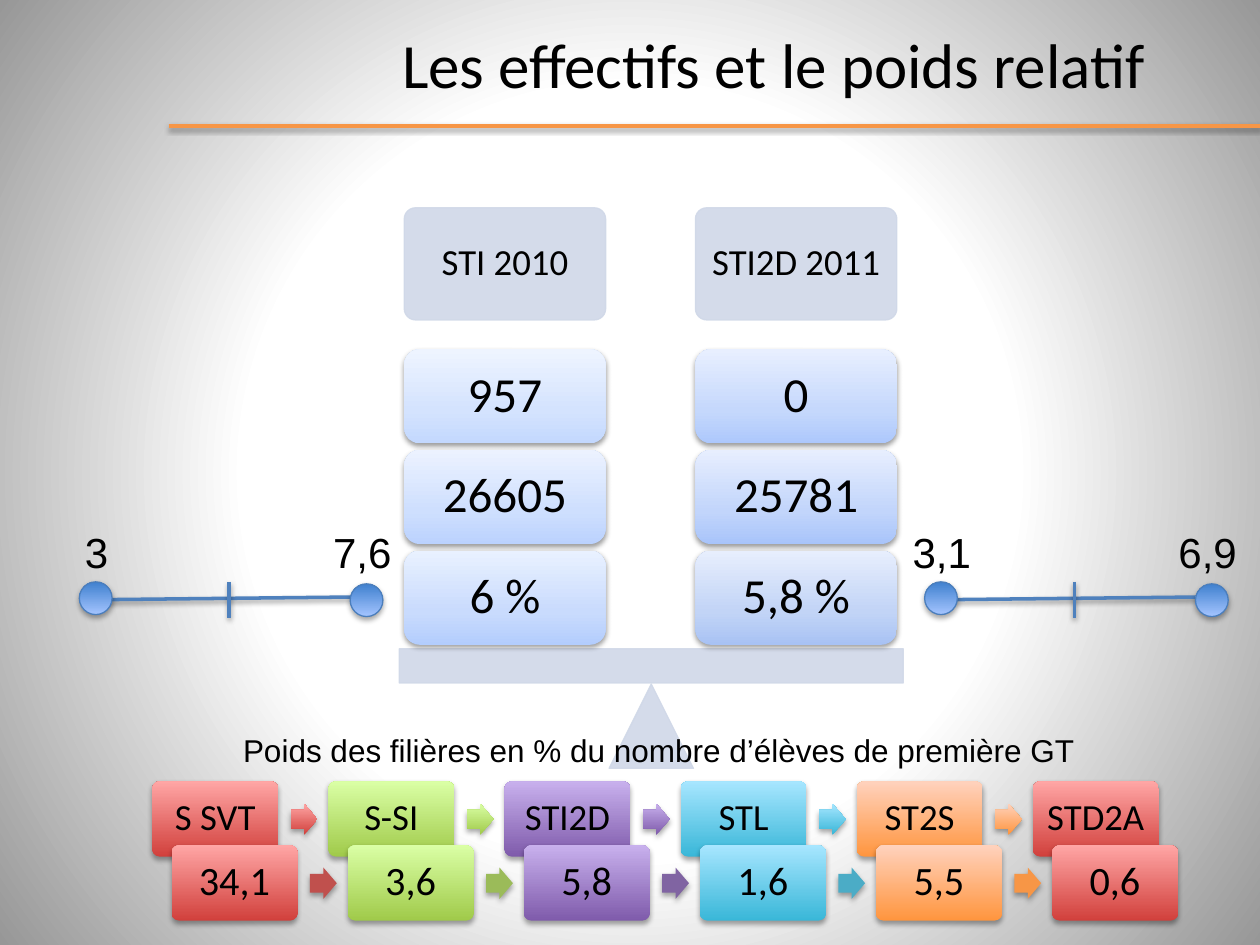
from lxml.etree import SubElement
from pptx import Presentation
from pptx.dml.color import RGBColor as Rgb
from pptx.enum.shapes import MSO_CONNECTOR as Link, MSO_SHAPE as Geo
from pptx.enum.text import MSO_ANCHOR as Anchor, PP_ALIGN as Align
from pptx.oxml.ns import qn
from pptx.util import Cm, Pt

BLACK = Rgb(0x00, 0x00, 0x00)
WHITE = Rgb(0xFF, 0xFF, 0xFF)
GREY = Rgb(0x97, 0x97, 0x97)
ORANGE = Rgb(0xF7, 0x96, 0x46)
BLUE = Rgb(0x4F, 0x81, 0xBD)
RIM = Rgb(0x4B, 0x7E, 0xBC)
PALE = Rgb(0xD0, 0xD8, 0xE8)
KNOB = [(0, Rgb(0xA4, 0xC4, 0xFF)), (100, Rgb(0x3F, 0x80, 0xCE))]

RED = (Rgb(0xD1, 0x40, 0x3C), Rgb(0xFF, 0xA6, 0xA5), Rgb(0xC0, 0x50, 0x4D))
GREEN = (Rgb(0xA0, 0xCA, 0x4A), Rgb(0xDA, 0xFF, 0xA5), Rgb(0x9B, 0xBB, 0x59))
PURPLE = (Rgb(0x7F, 0x5B, 0xAB), Rgb(0xC8, 0xB0, 0xED), Rgb(0x80, 0x64, 0xA2))
CYAN = (Rgb(0x39, 0xB7, 0xD8), Rgb(0xA7, 0xE6, 0xFF), Rgb(0x4B, 0xAC, 0xC6))
AMBER = (Rgb(0xFF, 0x95, 0x3E), Rgb(0xFF, 0xD2, 0xBD), ORANGE)
HUES = [RED, GREEN, PURPLE, CYAN, AMBER, RED]

PANS = [
    ("STI 2010", [
        ("957", Rgb(0xC3, 0xD8, 0xFE), Rgb(0xD4, 0xE3, 0xFE), Rgb(0xEE, 0xF4, 0xFF)),
        ("26605", Rgb(0xBB, 0xD2, 0xFE), Rgb(0xCE, 0xDF, 0xFE), Rgb(0xEC, 0xF2, 0xFF)),
        ("6 %", Rgb(0xB3, 0xCD, 0xFD), Rgb(0xC9, 0xDB, 0xFD), Rgb(0xE9, 0xF1, 0xFF))]),
    ("STI2D 2011", [
        ("0", Rgb(0xAD, 0xC8, 0xFC), Rgb(0xC5, 0xD8, 0xFC), Rgb(0xE8, 0xEF, 0xFF)),
        ("25781", Rgb(0xA8, 0xC4, 0xFA), Rgb(0xC2, 0xD5, 0xFB), Rgb(0xE7, 0xEE, 0xFE)),
        ("5,8 %", Rgb(0xA8, 0xC2, 0xF4), Rgb(0xC2, 0xD4, 0xF6), Rgb(0xE7, 0xEE, 0xFD))]),
]
TRACKS = ["S SVT", "S-SI", "STI2D", "STL", "ST2S", "STD2A"]
SHARES = ["34,1", "3,6", "5,8", "1,6", "5,5", "0,6"]


def blend(fill, node, stops):
    """Give a fill a gradient with any number of stops, from bottom to top."""
    fill.gradient()
    fill.gradient_angle = 90
    grad = next(node.iter(qn("a:gradFill")))
    group = grad.find(qn("a:gsLst"))
    group.clear()
    for pos, hue in stops:
        stop = SubElement(group, qn("a:gs"), pos=str(pos * 1000))
        SubElement(stop, qn("a:srgbClr"), val=str(hue))
    return grad


def shade(item, alpha=38, dist=1.6):
    """Set a soft shadow straight below a shape or line."""
    props = item._element.spPr
    for old in props.findall(qn("a:effectLst")):
        props.remove(old)
    group = SubElement(props, qn("a:effectLst"))
    drop = SubElement(group, qn("a:outerShdw"), blurRad=str(Pt(3.1)),
                      dist=str(Pt(dist)), dir="5400000", rotWithShape="0")
    hue = SubElement(drop, qn("a:srgbClr"), val=str(BLACK))
    SubElement(hue, qn("a:alpha"), val=str(alpha * 1000))


def write(item, text, size, font="Calibri", align=Align.CENTER,
          anchor=Anchor.MIDDLE, pad=None, lead=None, wrap=True):
    """Put one formatted paragraph in a shape or text box."""
    frame = item.text_frame
    frame.word_wrap = wrap
    frame.vertical_anchor = anchor
    if pad is not None:
        frame.margin_left = frame.margin_right = Cm(pad)
        frame.margin_top = frame.margin_bottom = Cm(pad)
    para = frame.paragraphs[0]
    para.text = text
    para.alignment = align
    para.line_spacing = lead
    para.font.size = Pt(size)
    para.font.name = font
    para.font.color.rgb = BLACK


def label(slide, box, text, size, **form):
    """Add a text box."""
    item = slide.shapes.add_textbox(*map(Cm, box))
    write(item, text, size, **form)


def block(slide, geo, box, fill, line=None, adj=()):
    """Add a preset shape with a plain or blended fill."""
    item = slide.shapes.add_shape(geo, *map(Cm, box))
    item.shadow.inherit = False
    for i, part in enumerate(adj):
        item.adjustments[i] = part
    if isinstance(fill, list):
        blend(item.fill, item._element.spPr, fill)
    else:
        item.fill.solid()
        item.fill.fore_color.rgb = fill
    if line is None:
        item.line.fill.background()
    else:
        item.line.color.rgb = line
        item.line.width = Pt(0.75)
    return item


def glass(slide, geo, box, **form):
    """Add a pale, slightly see-through shape."""
    item = block(slide, geo, box, PALE, PALE, **form)
    for hue in item._element.spPr.iter(qn("a:srgbClr")):
        SubElement(hue, qn("a:alpha"), val="90000")
    return item


def rule(slide, ends, hue):
    """Add a straight line with a shadow."""
    item = slide.shapes.add_connector(Link.STRAIGHT, *map(Cm, ends))
    item.line.color.rgb = hue
    item.line.width = Pt(2)
    shade(item)


def header(slide, x, y):
    """Place the title and the line under it."""
    rule(slide, (x, y + 2.54, x + 22, y + 2.54), ORANGE)
    label(slide, (x + 2.39, y, 19.61, 2.54), "Les effectifs et le poids relatif", 36)


def scale(slide, x, y):
    """Place the balance with its two stacks."""
    glass(slide, Geo.ISOSCELES_TRIANGLE, (x + 4.23, y + 9.6, 1.7, 1.7))
    glass(slide, Geo.RECTANGLE, (x, y + 8.89, 10.16, 0.69))
    for col, (name, stack) in enumerate(PANS):
        left = x + 0.1 + 5.87 * col
        head = glass(slide, Geo.ROUNDED_RECTANGLE, (left, y, 4.06, 2.26), adj=[0.1])
        write(head, name, 21, pad=0.1, lead=0.9, wrap=False)
        for row, (text, low, mid, top) in enumerate(stack):
            item = block(slide, Geo.ROUNDED_RECTANGLE,
                         (left, y + 2.85 + 2.03 * row, 4.06, 1.9),
                         [(0, low), (35, mid), (100, top)])
            shade(item)
            write(item, text, 28, pad=0.1, lead=0.9, wrap=False)


def gauge(slide, x, y, first, last):
    """Place a range line with a knob and a value at each end."""
    rule(slide, (x + 1.04, y + 1.6, x + 6.7, y + 1.54), BLUE)
    rule(slide, (x + 3.73, y + 1.24, x + 3.73, y + 1.96), BLUE)
    for dx, dy in ((0.71, 1.24), (6.17, 1.28)):
        knob = block(slide, Geo.OVAL, (x + dx, y + dy, 0.66, 0.66), KNOB, RIM)
        shade(knob, 35, 1.8)
    for dx, text in ((0, first), (5.36, last)):
        label(slide, (x + dx, y, 2.11, 1.27), text, 24, font="Arial", anchor=Anchor.TOP)


def chain(slide, x, y, texts, size, plain):
    """Place a row of boxes joined by arrows."""
    for i, (text, (low, top, flat)) in enumerate(zip(texts, HUES)):
        left = x + 3.55 * i
        fill = [(0, low), (100, top)]
        item = block(slide, Geo.ROUNDED_RECTANGLE, (left, y, 2.54, 1.52), fill, adj=[0.1])
        shade(item, 35, 1.8)
        write(item, text, size, pad=0.1, lead=0.9, wrap=False)
        if i < len(texts) - 1:
            arrow = block(slide, Geo.RIGHT_ARROW, (left + 2.79, y + 0.45, 0.54, 0.63),
                          flat if plain else fill, adj=[0.6, 0.5])
            shade(arrow, 35, 1.8)


def main():
    """Build the slide and save it."""
    deck = Presentation()
    deck.slide_width, deck.slide_height = Cm(25.4), Cm(19.05)
    slide = deck.slides.add_slide(deck.slide_layouts[6])
    grad = blend(slide.background.fill, slide._element, [(49, WHITE), (100, GREY)])
    grad.remove(grad.find(qn("a:lin")))
    ring = SubElement(grad, qn("a:path"), path="circle")
    SubElement(ring, qn("a:fillToRect"), l="50000", t="50000", r="50000", b="50000")

    header(slide, 3.4, 0)
    scale(slide, 8.05, 4.19)
    gauge(slide, 17.93, 10.49, "3,1", "6,9")
    gauge(slide, 0.89, 10.49, "3", "7,6")
    chain(slide, 3.07, 15.75, TRACKS, 21, False)
    chain(slide, 3.46, 17.04, SHARES, 23, True)
    label(slide, (4.65, 14.61, 18.62, 1.02),
          "Poids des filières en % du nombre d’élèves de première GT", 18,
          font="Arial", align=Align.LEFT, anchor=Anchor.TOP)
    deck.save("out.pptx")


if __name__ == "__main__":
    main()
